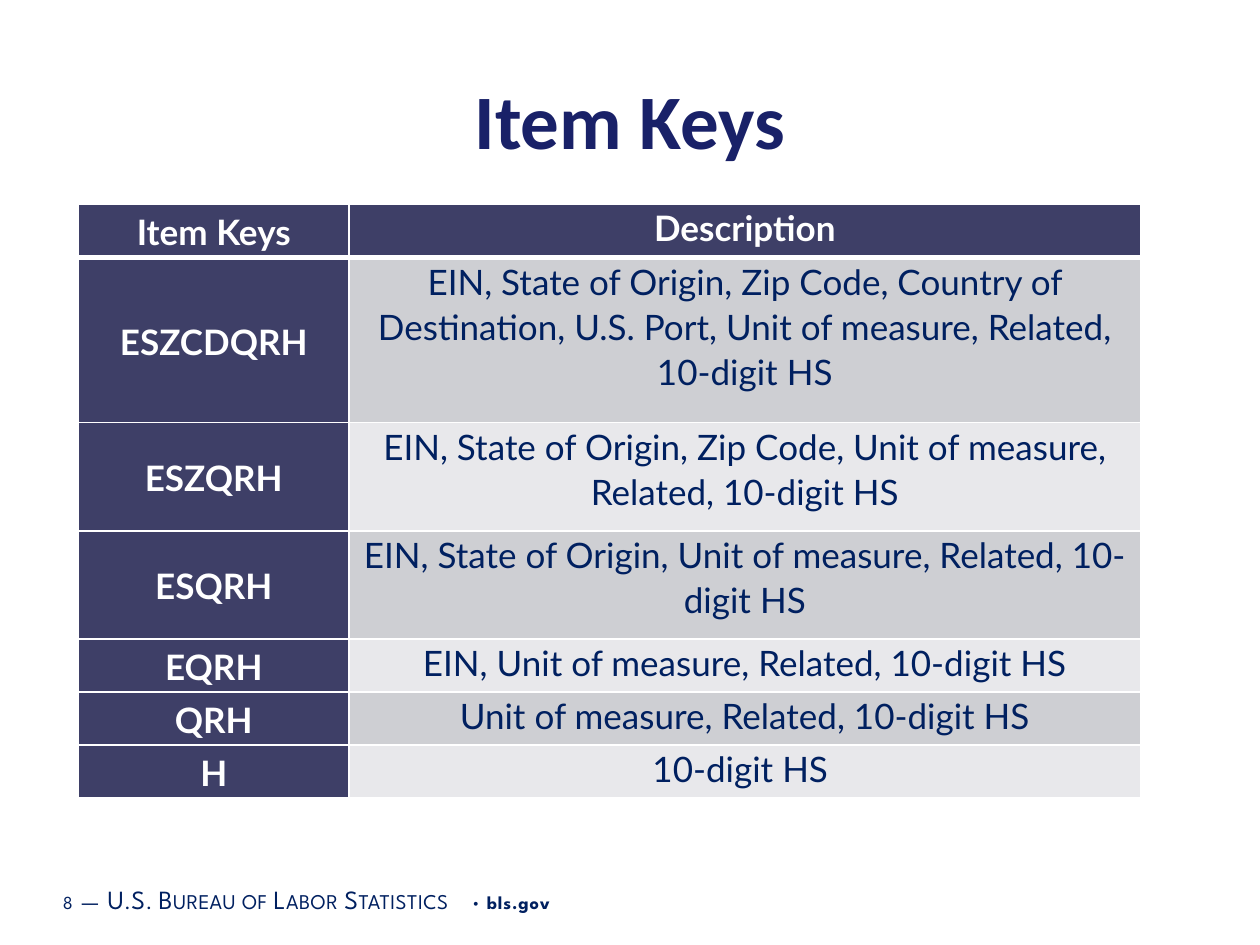
from lxml.etree import SubElement
from pptx import Presentation
from pptx.dml.color import RGBColor
from pptx.enum.text import MSO_ANCHOR as Anchor, PP_ALIGN as Align
from pptx.oxml.ns import qn
from pptx.util import Cm, Pt

COLORS = {
    "title": "192168",
    "navy": "002060",
    "key": "3E3F67",
    "dark_band": "CECFD3",
    "light_band": "E8E8EB",
    "white": "FFFFFF",
}
ITEM_KEYS = [
    ("Item Keys", "Description", 1.07),
    ("ESZCDQRH", "EIN, State of Origin, Zip Code, Country of Destination, "
     "U.S. Port, Unit of measure, Related, 10-digit HS", 3.33),
    ("ESZQRH", "EIN, State of Origin, Zip Code, Unit of measure, Related, 10-digit HS", 2.18),
    ("ESQRH", "EIN, State of Origin, Unit of measure, Related, 10-digit HS", 2.18),
    ("EQRH", "EIN, Unit of measure, Related, 10-digit HS", 1.07),
    ("QRH", "Unit of measure, Related, 10-digit HS", 1.07),
    ("H", "10-digit HS ", 1.07),
]
FOOTER = [
    ("8", 10.5, 50, False, False),
    (" ", 16, 50, False, False),
    ("—", 15, 30, True, False),
    (" ", 16, 50, False, False),
    ("U.S. Bureau of Labor Statistics", 15, 30, True, False),
    (" • ", 10.5, 50, False, False),
    ("bls.gov", 10.5, 50, False, True),
]


def rgb(name):
    return RGBColor.from_string(COLORS[name])


def style(font, face, size, color, bold=False):
    font.name = face
    font.size = Pt(size)
    font.color.rgb = rgb(color)
    font.bold = bold


def add_text_frame(slide, left, top, width, height):
    frame = slide.shapes.add_textbox(Cm(left), Cm(top), Cm(width), Cm(height)).text_frame
    frame.word_wrap = True
    frame.vertical_anchor = Anchor.MIDDLE
    return frame


def add_title(slide, left, top, width, height):
    title = add_text_frame(slide, left, top, width, height).paragraphs[0]
    title.text = "Item Keys"
    title.alignment = Align.CENTER
    style(title.runs[0].font, "Calibri", 44, "title", True)


def add_footer(slide, left, top, width, height):
    frame = add_text_frame(slide, left, top, width, height)
    frame.margin_left = frame.margin_right = Cm(0.18)
    frame.margin_top = frame.margin_bottom = Cm(0.1)
    for text, size, spacing, small_caps, bold in FOOTER:
        part = frame.paragraphs[0].add_run()
        part.text = text
        style(part.font, "League Spartan", size, "navy", bold)
        properties = part.font._element
        properties.set("spc", str(spacing))
        if small_caps:
            properties.set("cap", "small")


def add_borders(cell, top_width, bottom_width):
    properties = cell._tc.get_or_add_tcPr()
    for side, width in (("L", 1), ("R", 1), ("T", top_width), ("B", bottom_width)):
        line = SubElement(properties, qn(f"a:ln{side}"), w=str(Pt(width)))
        fill = SubElement(line, qn("a:solidFill"))
        SubElement(fill, qn("a:srgbClr"), val=COLORS["white"])


def fill_cell(cell, text, fill, color, bold, anchor):
    cell.fill.solid()
    cell.fill.fore_color.rgb = rgb(fill)
    cell.margin_left = cell.margin_right = Cm(0.18)
    cell.margin_top = cell.margin_bottom = 0
    cell.vertical_anchor = anchor
    entry = cell.text_frame.paragraphs[0]
    entry.text = text
    entry.alignment = Align.CENTER
    entry.line_spacing = 1.07
    style(entry.runs[0].font, "Lato", 20, color, bold)


def add_key_table(slide, left, top, width, key_width):
    total_height = sum(height for _, _, height in ITEM_KEYS)
    table = slide.shapes.add_table(
        len(ITEM_KEYS), 2, Cm(left), Cm(top), Cm(width), Cm(total_height)).table
    table.columns[0].width = Cm(key_width)
    table.columns[1].width = Cm(width - key_width)
    for row, (key, description, height) in enumerate(ITEM_KEYS):
        table.rows[row].height = Cm(height)
        header = row == 0
        band = "key" if header else "dark_band" if row % 2 else "light_band"
        color = "white" if header else "navy"
        key_cell, description_cell = table.cell(row, 0), table.cell(row, 1)
        for cell in (key_cell, description_cell):
            add_borders(cell, 3 if row == 1 else 1, 3 if header else 1)
        fill_cell(key_cell, key, "key", "white", True, Anchor.MIDDLE)
        fill_cell(description_cell, description, band, color, header, Anchor.TOP)


def main():
    deck = Presentation()
    deck.slide_width, deck.slide_height = Cm(25.4), Cm(19.05)
    slide = deck.slides.add_slide(deck.slide_layouts[6])
    add_footer(slide, 1.09, 17.6, 16.08, 1.02)
    add_title(slide, 1.27, 1.27, 22.86, 2.24)
    add_key_table(slide, 1.58, 4.12, 21.41, 5.46)
    deck.save("out.pptx")


if __name__ == "__main__":
    main()
